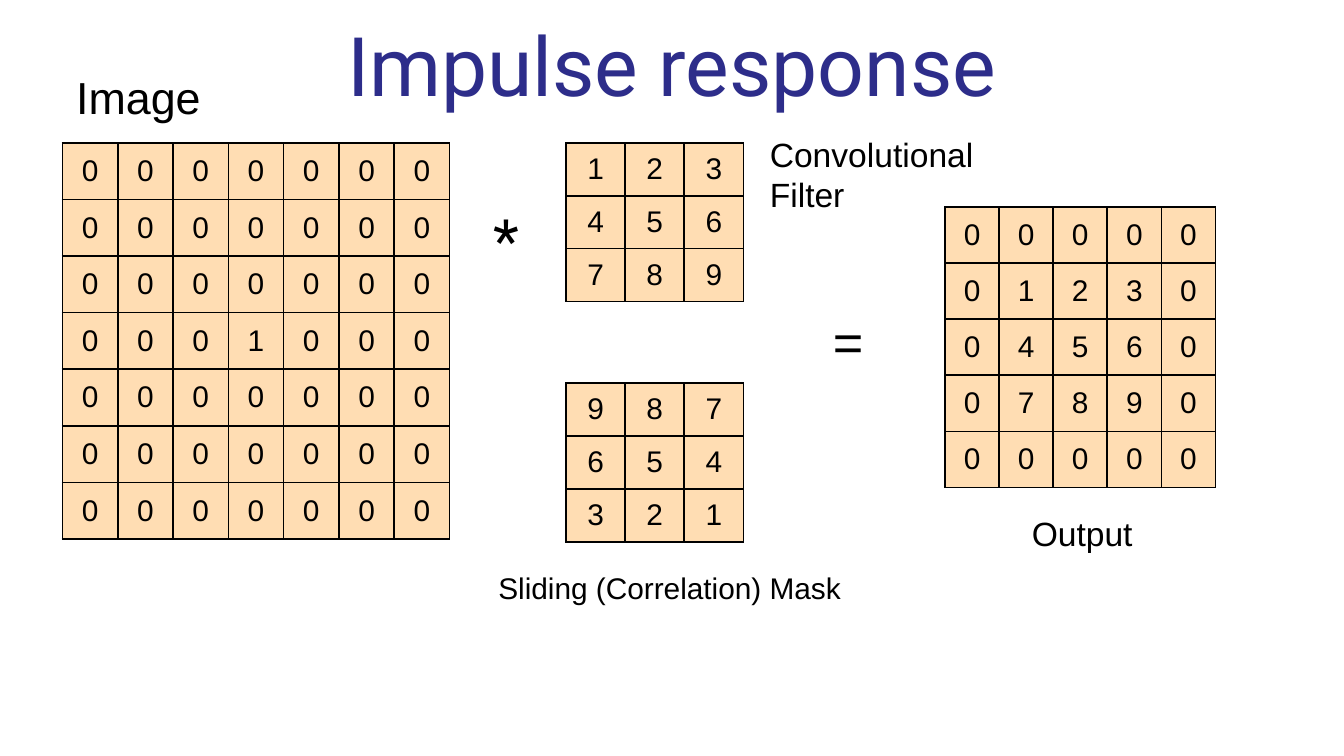
from lxml.etree import SubElement
from pptx import Presentation
from pptx.dml.color import RGBColor
from pptx.enum.text import MSO_ANCHOR, MSO_AUTO_SIZE, PP_ALIGN
from pptx.oxml.ns import qn
from pptx.util import Cm, Pt


def color(hex_text):
    return RGBColor.from_string(hex_text)


class SlideBuilder:
    font = "Arial"
    heading_font = "Roboto"
    ink = "000000"
    heading_ink = "2D2D8A"
    cell_fill = "FFDDB3"
    cell_size = 16

    def __init__(self, slide):
        self.s = slide

    def run(self, p, text, size, font=None, ink=None):
        r = p.add_run()
        r.text = text
        r.font.size = Pt(size)
        r.font.name = font or self.font
        r.font.color.rgb = color(ink or self.ink)

    def title(self, text, width, height):
        sp = self.s.shapes.title
        sp.left, sp.top, sp.width, sp.height = 0, 0, Cm(width), Cm(height)
        tf = sp.text_frame
        tf.auto_size = MSO_AUTO_SIZE.NONE
        tf.vertical_anchor = MSO_ANCHOR.MIDDLE
        tf.margin_left = tf.margin_right = Cm(0.25)
        tf.margin_top = tf.margin_bottom = Cm(0.25)
        p = tf.paragraphs[0]
        p.alignment = PP_ALIGN.CENTER
        self.run(p, text, 44, self.heading_font, self.heading_ink)

    def label(self, lines, left, top, width, height, size, font=None):
        sp = self.s.shapes.add_textbox(Cm(left), Cm(top), Cm(width), Cm(height))
        tf = sp.text_frame
        tf.word_wrap = False
        tf.auto_size = MSO_AUTO_SIZE.SHAPE_TO_FIT_TEXT
        for i, line in enumerate(lines):
            p = tf.add_paragraph() if i else tf.paragraphs[0]
            self.run(p, line, size, font)

    def border(self, cell):
        tc_pr = cell._tc.get_or_add_tcPr()
        for i, side in enumerate(("a:lnL", "a:lnR", "a:lnT", "a:lnB")):
            ln = tc_pr.makeelement(qn(side), {"w": str(Pt(1))})
            fill = SubElement(ln, qn("a:solidFill"))
            SubElement(fill, qn("a:srgbClr"), val=self.ink)
            tc_pr.insert(i, ln)

    def matrix(self, values, left, top, width, height):
        rows, cols = len(values), len(values[0])
        tbl = self.s.shapes.add_table(
            rows, cols, Cm(left), Cm(top), Cm(width), Cm(height)
        ).table
        tbl.first_row = tbl.horz_banding = False
        for col in tbl.columns:
            col.width = Cm(width / cols)
        for r, row in enumerate(values):
            tbl.rows[r].height = Cm(height / rows)
            for c, value in enumerate(row):
                cell = tbl.cell(r, c)
                cell.fill.solid()
                cell.fill.fore_color.rgb = color(self.cell_fill)
                cell.vertical_anchor = MSO_ANCHOR.MIDDLE
                self.border(cell)
                p = cell.text_frame.paragraphs[0]
                p.alignment = PP_ALIGN.CENTER
                self.run(p, str(value), self.cell_size)


def correlate(image, mask):
    n = len(mask)
    steps = range(len(image) - n + 1)
    return [
        [
            sum(image[r + i][c + j] * mask[i][j] for i in range(n) for j in range(n))
            for c in steps
        ]
        for r in steps
    ]


def main():
    prs = Presentation()
    prs.slide_width, prs.slide_height = Cm(25.4), Cm(14.29)
    b = SlideBuilder(prs.slides.add_slide(prs.slide_layouts[5]))

    image = [[int(r == c == 3) for c in range(7)] for r in range(7)]
    kernel = [[1, 2, 3], [4, 5, 6], [7, 8, 9]]
    mask = [row[::-1] for row in kernel[::-1]]

    b.title("Impulse response", 25.4, 2.39)
    b.label(["Image"], 1.19, 1.19, 2.9, 1.27, 24)
    b.label(["Convolutional", "Filter"], 14.3, 2.41, 4.57, 1.8, 18)
    b.label(["Sliding (Correlation) Mask"], 9.17, 10.64, 7.06, 0.94, 16)
    b.matrix(image, 1.18, 2.7, 7.32, 7.49)
    b.matrix(kernel, 10.7, 2.7, 3.35, 3)
    b.matrix(correlate(image, mask), 17.86, 3.91, 5.11, 5.31)
    b.label(["Output"], 19.25, 9.58, 2.44, 1.02, 18)
    b.label(["*"], 9.07, 3.71, 1.09, 1.63, 32, b.heading_font)
    b.label(["="], 15.49, 5.72, 1.09, 1.45, 28)
    b.matrix(mask, 10.7, 7.24, 3.35, 3)

    prs.save("out.pptx")


if __name__ == "__main__":
    main()
